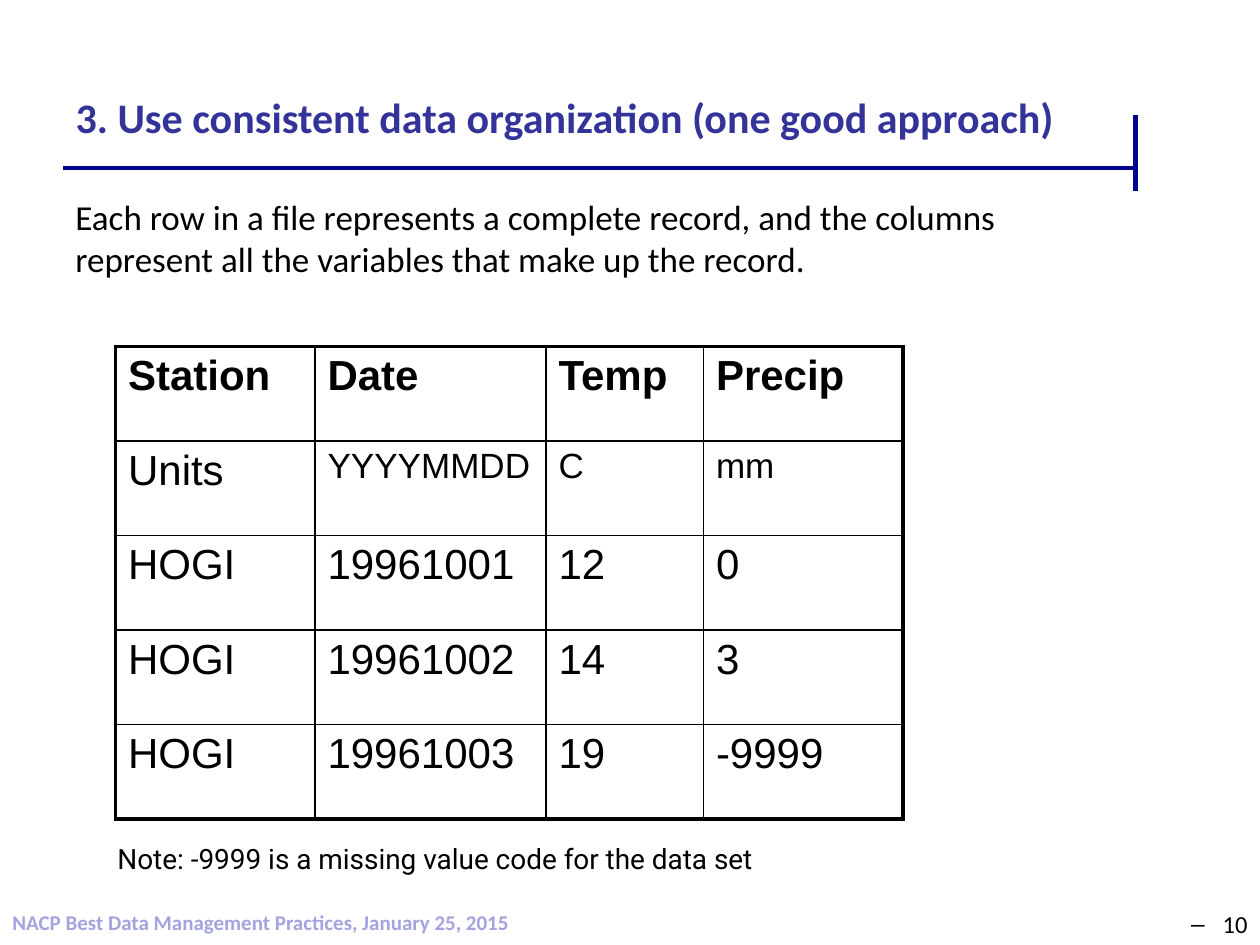
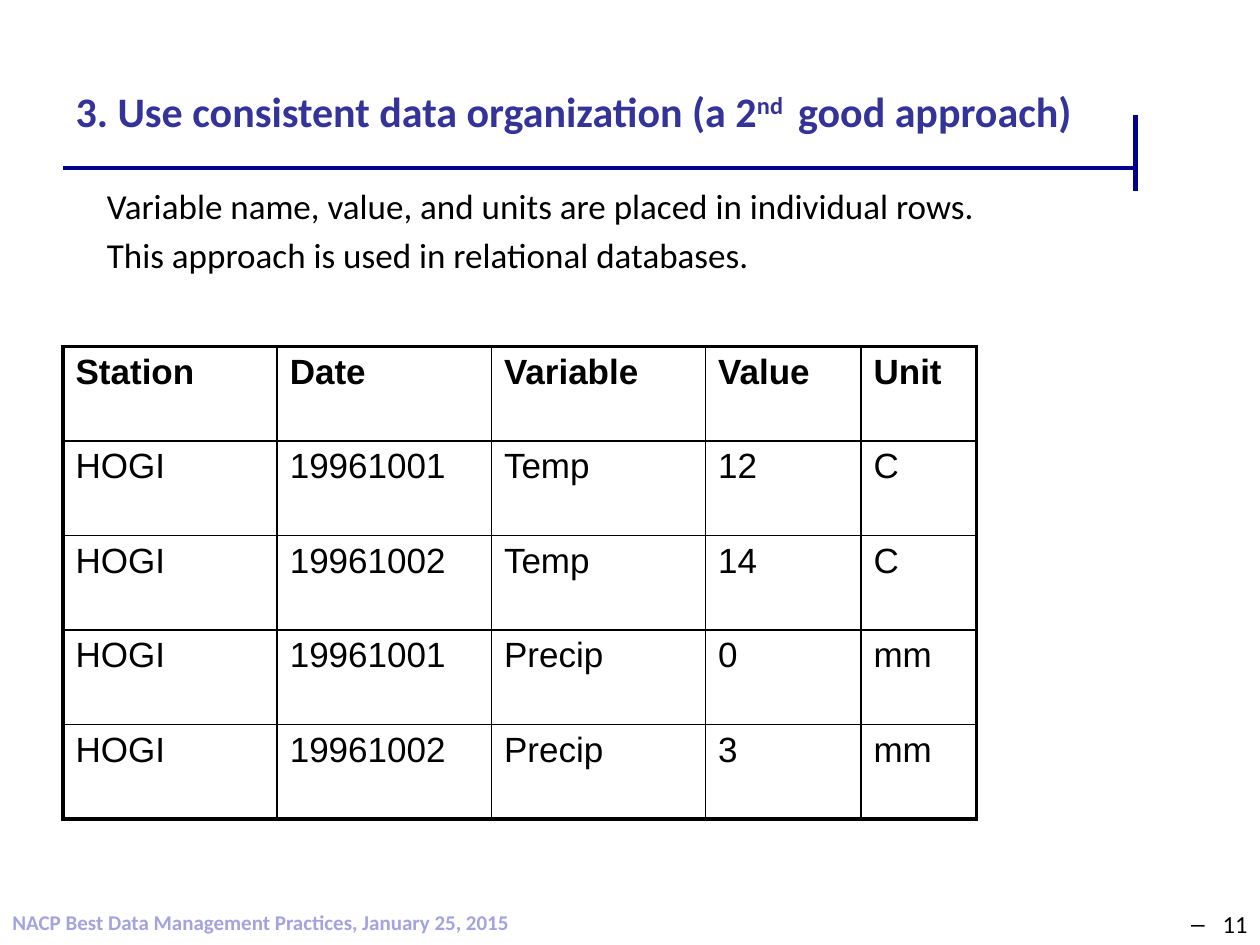
import dataclasses

import lxml.etree
import pptx
import pptx.dml.color
import pptx.enum.shapes
import pptx.enum.text
import pptx.oxml
import pptx.oxml.ns
import pptx.util

Pt = pptx.util.Pt
qn = pptx.oxml.ns.qn
Align = pptx.enum.text.PP_ALIGN
Anchor = pptx.enum.text.MSO_ANCHOR
Fit = pptx.enum.text.MSO_AUTO_SIZE


@dataclasses.dataclass(frozen=True)
class Theme:
    ink: str = "000000"
    title: str = "333399"
    rule: str = "000090"
    pale: str = "A3A3E0"
    sans: str = "Calibri"
    grid: str = "Arial"
    note: str = "Roboto"
    head: int = 24
    body: int = 20
    small: int = 16
    page: int = 14
    foot: int = 12
    thick: float = 2.25
    thin: float = 1
    bar: float = 2.75
    gap: int = 4
    row: int = 54


THEME = Theme()
FOOTER = "NACP Best Data Management Practices, January 25, 2015"


def apply(item, values):
    for name, value in values.items():
        setattr(item, name, value)


def color(code):
    return pptx.dml.color.RGBColor.from_string(code)


def style(font, face, size, ink=THEME.ink, bold=False):
    apply(font, {"name": face, "size": Pt(size), "bold": bold})
    font.color.rgb = color(ink)


def place(item, box):
    names = ("left", "top", "width", "height")
    apply(item, dict(zip(names, map(Pt, box))))


def add_title(slide, top, parts):
    title = slide.shapes.title
    place(title, (36, top, 648, 90))
    frame = title.text_frame
    apply(frame, {"word_wrap": True, "auto_size": Fit.NONE,
                  "vertical_anchor": Anchor.MIDDLE})
    para = frame.paragraphs[0]
    para.alignment = Align.LEFT
    for text, raised in parts:
        run = para.add_run()
        run.text = text
        style(run.font, THEME.sans, THEME.head, THEME.title, True)
        if raised:
            run._r.get_or_add_rPr().set("baseline", "30000")


def add_text(slide, box, lines, face, size, ink=THEME.ink, bold=False,
             fit=Fit.NONE, wrap=True):
    shape = slide.shapes.add_textbox(*map(Pt, box))
    frame = shape.text_frame
    apply(frame, {"word_wrap": wrap, "auto_size": fit})
    for index, line in enumerate(lines):
        para = frame.add_paragraph() if index else frame.paragraphs[0]
        if index:
            para.space_before = Pt(THEME.gap)
        run = para.add_run()
        run.text = line
        style(run.font, face, size, ink, bold)
    return frame


def add_body(slide, box, lines):
    add_text(slide, box, lines, THEME.sans, THEME.body, fit=Fit.SHAPE_TO_FIT_TEXT)


def add_rule(slide, *ends):
    line = slide.shapes.add_connector(
        pptx.enum.shapes.MSO_CONNECTOR.STRAIGHT, *map(Pt, ends))
    line.line.color.rgb = color(THEME.rule)
    line.line.width = Pt(THEME.bar)
    lxml.etree.SubElement(line._element.spPr, qn("a:effectLst"))


def add_page(slide, number):
    frame = add_text(slide, (552, 516, 168, 24), [str(number)],
                     THEME.sans, THEME.page)
    para = frame.paragraphs[0]
    para.alignment = Align.RIGHT
    props = para._p.get_or_add_pPr()
    props.set("marL", str(Pt(18)))
    props.set("indent", str(Pt(-18)))
    lxml.etree.SubElement(props, qn("a:buFont")).set("typeface", THEME.grid)
    lxml.etree.SubElement(props, qn("a:buChar")).set("char", "–")


def add_frame(slide, number):
    add_rule(slide, 649, 66, 649, 109)
    add_rule(slide, 36, 96, 648, 96)
    add_text(slide, (0, 516, 354, 24), [FOOTER], THEME.sans, THEME.foot,
             THEME.pale, True)
    add_page(slide, number)


def add_edges(cell, outer):
    props = cell._tc.get_or_add_tcPr()
    for side, edge in zip("LRTB", outer):
        line = lxml.etree.SubElement(props, qn("a:ln" + side))
        line.set("w", str(Pt(THEME.thick if edge else THEME.thin)))
        fill = lxml.etree.SubElement(line, qn("a:solidFill"))
        lxml.etree.SubElement(fill, qn("a:srgbClr")).set("val", THEME.ink)


def add_grid(slide, left, widths, rows, size, units=()):
    shape = slide.shapes.add_table(
        len(rows), len(widths), Pt(left), Pt(198),
        Pt(sum(widths)), Pt(THEME.row * len(rows)))
    table = shape.table
    apply(table, {"first_row": False, "horz_banding": False})
    for col, width in zip(table.columns, widths):
        col.width = Pt(width)
    for r, texts in enumerate(rows):
        table.rows[r].height = Pt(THEME.row)
        for c, text in enumerate(texts):
            cell = table.cell(r, c)
            add_edges(cell, (c == 0, c == len(widths) - 1,
                             r == 0, r == len(rows) - 1))
            cell.fill.background()
            run = cell.text_frame.paragraphs[0].add_run()
            run.text = text
            style(run.font, THEME.grid, THEME.body if text in units else size,
                  bold=r == 0)


def add_slide(deck, number):
    slide = deck.slides.add_slide(deck.slide_layouts[5])
    add_frame(slide, number)
    return slide


def wide_slide(deck):
    slide = add_slide(deck, 10)
    add_title(slide, 21.6, [
        ("3. Use consistent data organization (one good approach)", False)])
    units = ("YYYYMMDD", "C", "mm")
    add_grid(slide, 66, (114, 132, 90, 114), [
        ("Station", "Date", "Temp", "Precip"),
        ("Units", *units),
        ("HOGI", "19961001", "12", "0"),
        ("HOGI", "19961002", "14", "3"),
        ("HOGI", "19961003", "19", "-9999"),
    ], THEME.head, units)
    add_text(slide, (60, 477.5, 384, 26.6),
             ["Note: -9999 is a missing value code for the data set"],
             THEME.note, THEME.small, fit=Fit.SHAPE_TO_FIT_TEXT, wrap=False)
    add_body(slide, (36, 108, 558, 93.6), [
        "Each row in a file represents a complete record, and the columns "
        "represent all the variables that make up the record."])


def long_slide(deck):
    slide = add_slide(deck, 11)
    add_title(slide, 18, [
        ("3. Use consistent data organization (a 2", False),
        ("nd ", True), (" good approach)", False)])
    add_grid(slide, 36, (122.4, 122.4, 122.4, 88.8, 66), [
        ("Station", "Date", "Variable", "Value", "Unit"),
        ("HOGI", "19961001", "Temp", "12", "C"),
        ("HOGI", "19961002", "Temp", "14", "C"),
        ("HOGI", "19961001", "Precip", "0", "mm"),
        ("HOGI", "19961002", "Precip", "3", "mm"),
    ], THEME.body)
    add_body(slide, (54, 102, 540, 60.5), [
        "Variable name, value, and units are placed in individual rows.",
        "This approach is used in relational databases."])


def main():
    deck = pptx.Presentation()
    apply(deck, {"slide_width": Pt(720), "slide_height": Pt(540)})
    wide_slide(deck)
    long_slide(deck)
    deck.save("out.pptx")


if __name__ == "__main__":
    main()
